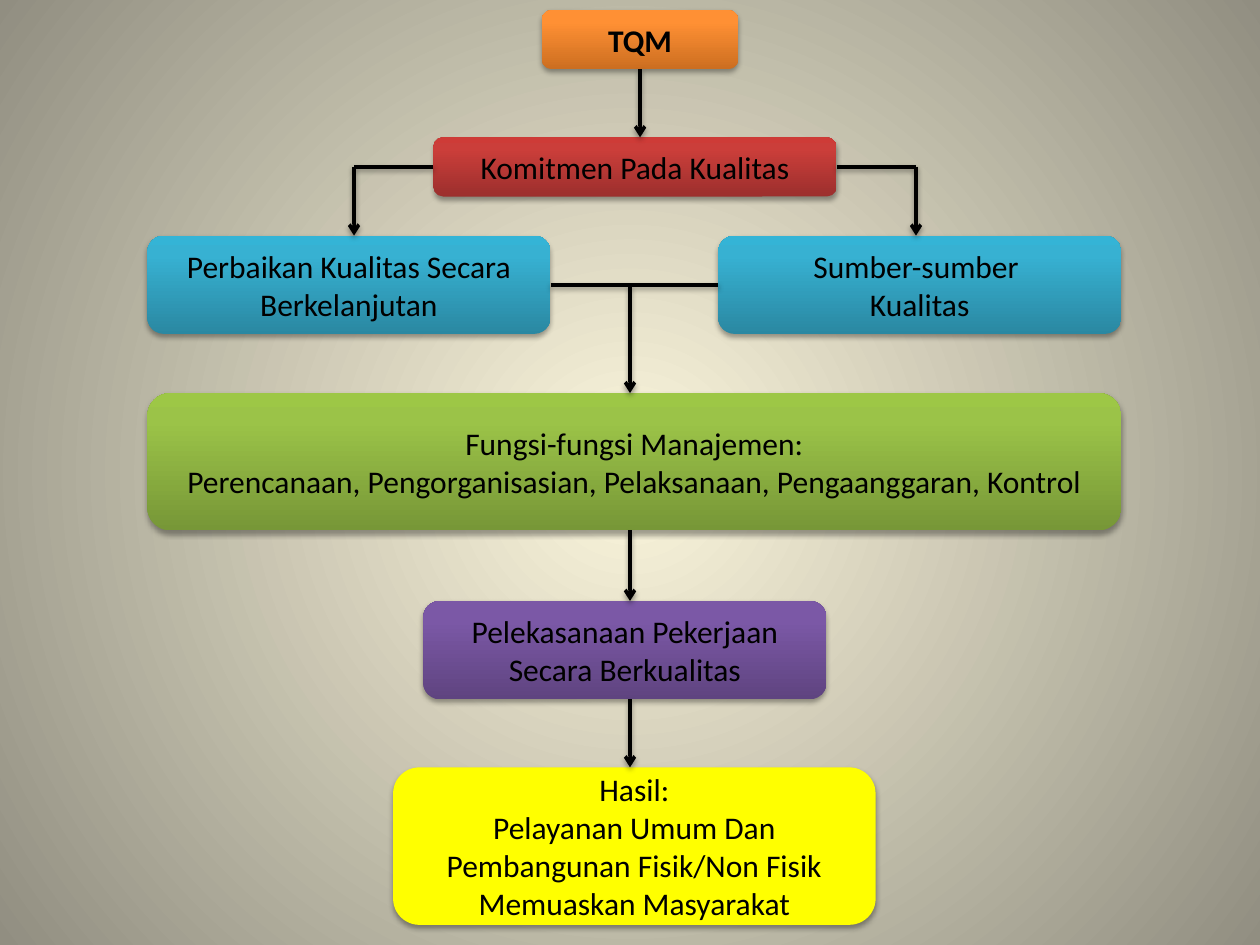
"""Build the TQM flow chart slide."""
from dataclasses import dataclass

from lxml import etree
from pptx import Presentation
from pptx import util as u
from pptx.dml.color import RGBColor
from pptx.enum import shapes, text
from pptx.oxml.ns import qn


@dataclass(frozen=True)
class Theme:
    """Colours and sizes of the slide."""
    font: str = "Calibri"
    size: int = 18
    line_width: int = 2
    ink: str = "000000"
    backdrop: tuple = ((0, "FCF7DD"), (100, "918E81"))
    orange: tuple = ((0, "CC6E20"), (80, "FF9034"), (100, "FF9136"))
    red: tuple = ((0, "9C2F2D"), (80, "CB3E3A"), (100, "CE3B37"))
    blue: tuple = ((0, "2A88A2"), (80, "37B1D2"), (100, "34B4D6"))
    green: tuple = ((0, "779737"), (80, "9BC348"), (100, "9DC746"))
    purple: tuple = ((0, "5F4480"), (80, "7B58A6"), (100, "7C57A8"))
    yellow: str = "FFFF00"


@dataclass(frozen=True)
class Box:
    """A rectangle in inches."""
    left: float
    top: float
    width: float
    height: float

    def inner(self, left, top, width, height):
        """Return a rectangle placed relative to this one."""
        return Box(self.left + left, self.top + top, width, height)


THEME = Theme()
RIGHT, LEFT, BOTTOM = 3, 1, 2
SPINE = u.Inches(5)


def add_node(parent, tag, **attributes):
    """Append a drawing element and return it."""
    return etree.SubElement(parent, qn(tag), attributes)


def paint_gradient(holder, stops, radial=False):
    """Replace the solid fill of an element by a gradient."""
    gradient = etree.Element(qn("a:gradFill"), rotWithShape="1")
    stop_list = add_node(gradient, "a:gsLst")
    for position, colour in stops:
        stop = add_node(stop_list, "a:gs", pos=str(position * 1000))
        add_node(stop, "a:srgbClr", val=colour)
    if radial:
        circle = add_node(gradient, "a:path", path="circle")
        add_node(circle, "a:fillToRect", **dict.fromkeys("ltrb", "50000"))
    else:
        add_node(gradient, "a:lin", ang="16200000", scaled="0")
    holder.replace(holder.find(qn("a:solidFill")), gradient)


def add_shadow(effects, alpha, distance):
    """Add a soft downward shadow to an effect list."""
    shadow = add_node(effects, "a:outerShdw", blurRad=str(u.Pt(3.1)),
                      dist=str(u.Pt(distance)), dir="5400000", rotWithShape="0")
    colour = add_node(shadow, "a:srgbClr", val=THEME.ink)
    add_node(colour, "a:alpha", val=str(alpha * 1000))


def write(frame, *lines, bold=False):
    """Write centred paragraphs in a text frame."""
    frame.word_wrap = True
    frame.vertical_anchor = text.MSO_ANCHOR.MIDDLE
    for index, line in enumerate(lines):
        para = frame.add_paragraph() if index else frame.paragraphs[0]
        para.alignment = text.PP_ALIGN.CENTER
        span = para.add_run()
        span.text = line
        span.font.name = THEME.font
        span.font.size = u.Pt(THEME.size)
        span.font.bold = bold
        span.font.color.rgb = RGBColor.from_string(THEME.ink)


def add_step(page, box, fill, *lines, bold=False):
    """Draw one rounded step with its text."""
    step = page.shapes.add_shape(
        shapes.MSO_SHAPE.ROUNDED_RECTANGLE, u.Inches(box.left),
        u.Inches(box.top), u.Inches(box.width), u.Inches(box.height))
    step.fill.solid()
    if isinstance(fill, str):
        step.fill.fore_color.rgb = RGBColor.from_string(fill)
    else:
        paint_gradient(step.element.spPr, fill)
    step.line.fill.background()
    step.shadow.inherit = False
    add_shadow(step.element.spPr.find(qn("a:effectLst")), 35, 1.8)
    write(step.text_frame, *lines, bold=bold)
    return step


def add_link(page, start, end, arrow=False, begin=None, finish=None):
    """Draw a line between two points, joined to shapes where given."""
    link = page.shapes.add_connector(shapes.MSO_CONNECTOR.STRAIGHT, *start, *end)
    if begin:
        link.begin_connect(*begin)
    if finish:
        link.end_connect(*finish)
    link.line.color.rgb = RGBColor.from_string(THEME.ink)
    link.line.width = u.Pt(THEME.line_width)
    outline = link.element.spPr.find(qn("a:ln"))
    if arrow:
        add_node(outline, "a:tailEnd", type="arrow")
    add_shadow(add_node(link.element.spPr, "a:effectLst"), 38, 1.6)


def middle(step):
    """Return the centre point of a step."""
    return step.left + step.width // 2, step.top + step.height // 2


def add_commitment(page, box):
    """Draw the heading and the commitment below it."""
    heading = add_step(page, box.inner(0.86, 0, 1.56, 0.47), THEME.orange,
                       "TQM", bold=True)
    commitment = add_step(page, box.inner(0, 1.01, 3.2, 0.47), THEME.red,
                          "Komitmen Pada Kualitas")
    centre = middle(heading)[0]
    add_link(page, (centre, heading.top + heading.height),
             (centre, commitment.top), arrow=True, begin=(heading, BOTTOM))
    return commitment


def add_pillars(page, box, commitment):
    """Draw the two pillars and the branches that lead to them."""
    width = 3.2
    left = add_step(page, box.inner(0, 0, width, box.height), THEME.blue,
                    "Perbaikan Kualitas Secara Berkelanjutan")
    right = add_step(page, box.inner(box.width - width, 0, width, box.height),
                     THEME.blue, "Sumber-sumber ", "Kualitas")
    level = middle(commitment)[1]
    edges = commitment.left, commitment.left + commitment.width
    for side, edge, turn in zip((LEFT, RIGHT), edges, (2.81, 7.27)):
        corner = u.Inches(turn), level
        add_link(page, (edge, level), corner, begin=(commitment, side))
        add_link(page, corner, (corner[0], left.top), arrow=True)
    level = middle(left)[1]
    add_link(page, (left.left + left.width, level), (right.left, level),
             begin=(left, RIGHT), finish=(right, LEFT))
    return level


def add_delivery(page, box, source):
    """Draw the management functions, the work and the result."""
    steps = (
        (box.inner(0, 0, box.width, 1.09), THEME.green,
         ("Fungsi-fungsi Manajemen:",
          "Perencanaan, Pengorganisasian, Pelaksanaan, Pengaanggaran, Kontrol")),
        (box.inner(2.19, 1.65, 3.2, 0.78), THEME.purple,
         ("Pelekasanaan Pekerjaan Secara Berkualitas",)),
        (box.inner(1.95, 2.97, 3.83, 1.25), THEME.yellow,
         ("Hasil:",
          "Pelayanan Umum Dan Pembangunan Fisik/Non Fisik Memuaskan Masyarakat")),
    )
    for place, fill, lines in steps:
        step = add_step(page, place, fill, *lines)
        add_link(page, (SPINE, source), (SPINE, step.top), arrow=True)
        source = step.top + step.height


def main():
    """Build and save the deck."""
    deck = Presentation()
    deck.slide_width, deck.slide_height = u.Inches(10), u.Inches(7.5)
    page = deck.slides.add_slide(deck.slide_layouts[6])
    page.background.fill.solid()
    paint_gradient(page.element.find(".//" + qn("p:bgPr")), THEME.backdrop,
                   radial=True)
    commitment = add_commitment(page, Box(3.44, 0.08, 3.2, 1.48))
    junction = add_pillars(page, Box(1.17, 1.87, 7.73, 0.78), commitment)
    add_delivery(page, Box(1.17, 3.12, 7.73, 4.22), junction)
    deck.save("out.pptx")


if __name__ == "__main__":
    main()
